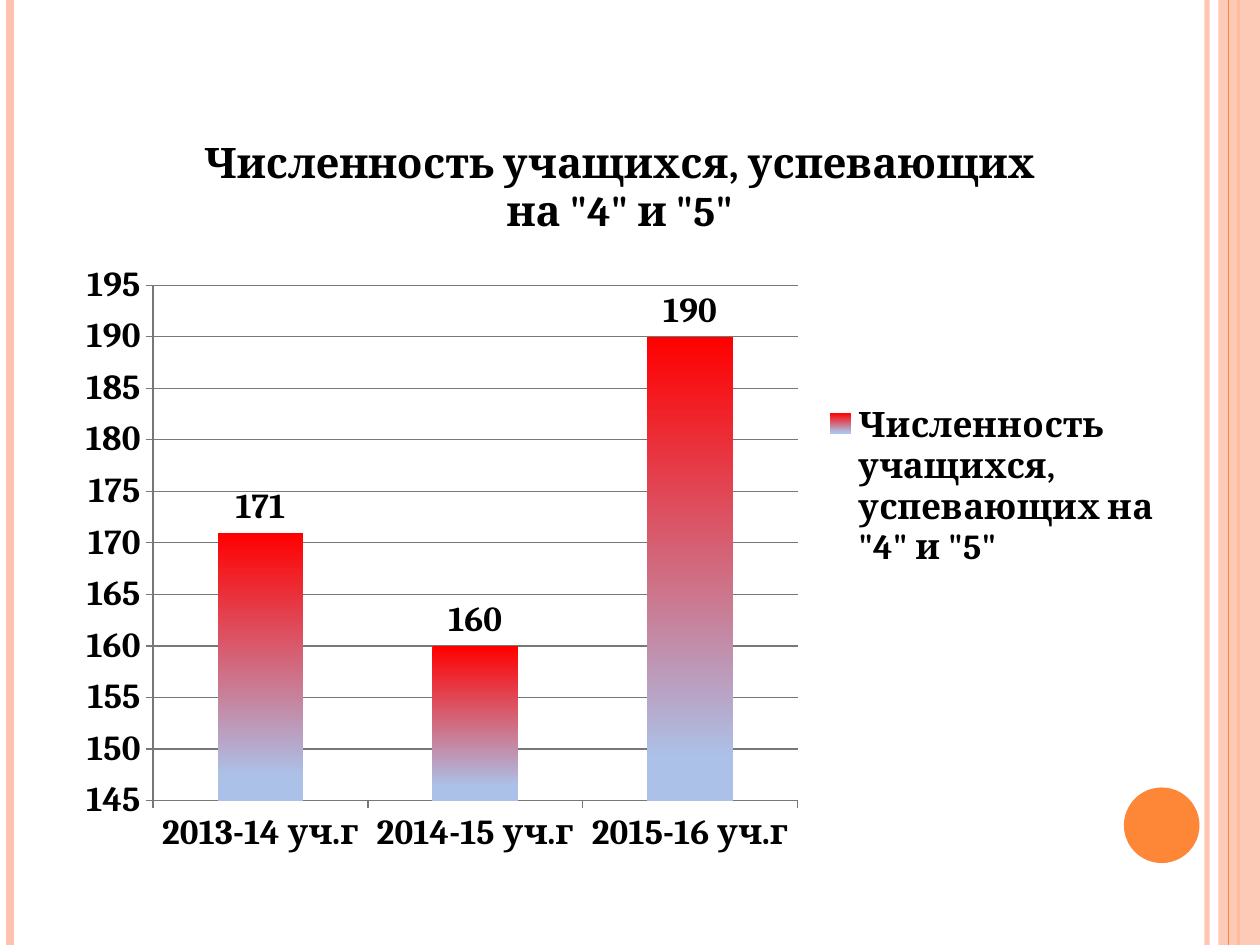
"""Build a slide with a column chart of pupils earning grades 4 and 5."""
from lxml.etree import SubElement
from pptx import Presentation
from pptx.chart.data import CategoryChartData
from pptx.dml.color import RGBColor
from pptx.enum.chart import XL_CHART_TYPE, XL_LABEL_POSITION, XL_LEGEND_POSITION, XL_TICK_MARK
from pptx.enum.shapes import MSO_CONNECTOR, MSO_SHAPE
from pptx.oxml import parse_xml
from pptx.oxml.ns import nsdecls, qn
from pptx.util import Inches, Pt

COLORS = {"peach": "FEC3AE", "orange": "FE8637", "black": "000000",
          "red": "FF0000", "blue": "ACC1E8", "gray": "777777"}
TITLE = 'Численность учащихся, успевающих на "4" и "5"'


def color(name):
    return RGBColor.from_string(COLORS[name])


def set_alpha(shape, percent):
    element = next(shape._element.spPr.iter(qn("a:srgbClr")))
    SubElement(element, qn("a:alpha"), val=str(percent * 1000))


presentation = Presentation()
presentation.slide_width = Inches(10)
presentation.slide_height = Inches(7.5)
slide = presentation.slides.add_slide(presentation.slide_layouts[6])

stripes = [(9.58, "peach", 3, 93), (0.08, "peach", 4.5, 100),
           (9.83, "orange", 1.5, 100), (9.75, "orange", 0.75, 100)]
for left, name, width, opacity in stripes:
    if left == 9.75:
        band = slide.shapes.add_shape(
            MSO_SHAPE.RECTANGLE, Inches(9.67), 0, Inches(0.33), Inches(7.5))
        band.shadow.inherit = False
        band.fill.solid()
        band.fill.fore_color.rgb = color("peach")
        band.line.fill.background()
        set_alpha(band, 87)
    stripe = slide.shapes.add_connector(
        MSO_CONNECTOR.STRAIGHT, Inches(left), 0, Inches(left), Inches(7.5))
    stripe.line.color.rgb = color(name)
    stripe.line.width = Pt(width)
    if opacity < 100:
        set_alpha(stripe, opacity)
    SubElement(stripe._element.spPr, qn("a:effectLst"))

circle = slide.shapes.add_shape(
    MSO_SHAPE.OVAL, Inches(8.92), Inches(6.25), Inches(0.6), Inches(0.6))
circle.shadow.inherit = False
circle.fill.solid()
circle.fill.fore_color.rgb = color("orange")
circle.line.fill.background()

chart_data = CategoryChartData()
chart_data.categories = ["2013-14 уч.г", "2014-15 уч.г", "2015-16 уч.г"]
chart_data.add_series(TITLE, [171, 160, 190])
chart = slide.shapes.add_chart(
    XL_CHART_TYPE.COLUMN_CLUSTERED, Inches(0.51), Inches(0.84),
    Inches(8.82), Inches(6.06), chart_data).chart
chart.font.name = "Cambria"
chart.font.size = Pt(20)
chart.font.bold = True
chart.font.color.rgb = color("black")

chart.has_title = True
chart.chart_title.include_in_layout = False
title_run = chart.chart_title.text_frame.paragraphs[0].add_run()
title_run.text = TITLE
title_run.font.name = "Cambria"
title_run.font.size = Pt(24)
title_run.font.bold = True
title_run.font.color.rgb = color("black")

chart.has_legend = True
chart.legend.position = XL_LEGEND_POSITION.RIGHT
chart.legend.include_in_layout = False

for axis in (chart.category_axis, chart.value_axis):
    axis.major_tick_mark = XL_TICK_MARK.OUTSIDE
    axis.minor_tick_mark = XL_TICK_MARK.NONE
    axis.format.line.color.rgb = color("gray")
chart.value_axis.minimum_scale = 145
chart.value_axis.maximum_scale = 195
chart.value_axis.major_unit = 5
chart.value_axis.has_major_gridlines = True
chart.value_axis.major_gridlines.format.line.color.rgb = color("gray")

plot = chart.plots[0]
plot.gap_width = 150
plot.vary_by_categories = False
plot.has_data_labels = True
plot.data_labels.show_value = True
plot.data_labels.position = XL_LABEL_POSITION.OUTSIDE_END
fill = plot.series[0].format.fill
fill.gradient()
fill.gradient_angle = 270
for stop, name, position in zip(fill.gradient_stops, ("red", "blue"), (0, 0.91)):
    stop.color.rgb = color(name)
    stop.position = position

plot_area = chart._chartSpace.chart.plotArea
for layout in plot_area.findall(qn("c:layout")):
    plot_area.remove(layout)
plot_area.insert(0, parse_xml(
    f'<c:layout {nsdecls("c")}><c:manualLayout><c:layoutTarget val="inner"/>'
    '<c:xMode val="edge"/><c:yMode val="edge"/><c:x val="0.08"/><c:y val="0.235"/>'
    '<c:w val="0.58"/><c:h val="0.675"/></c:manualLayout></c:layout>'))

presentation.save("out.pptx")
